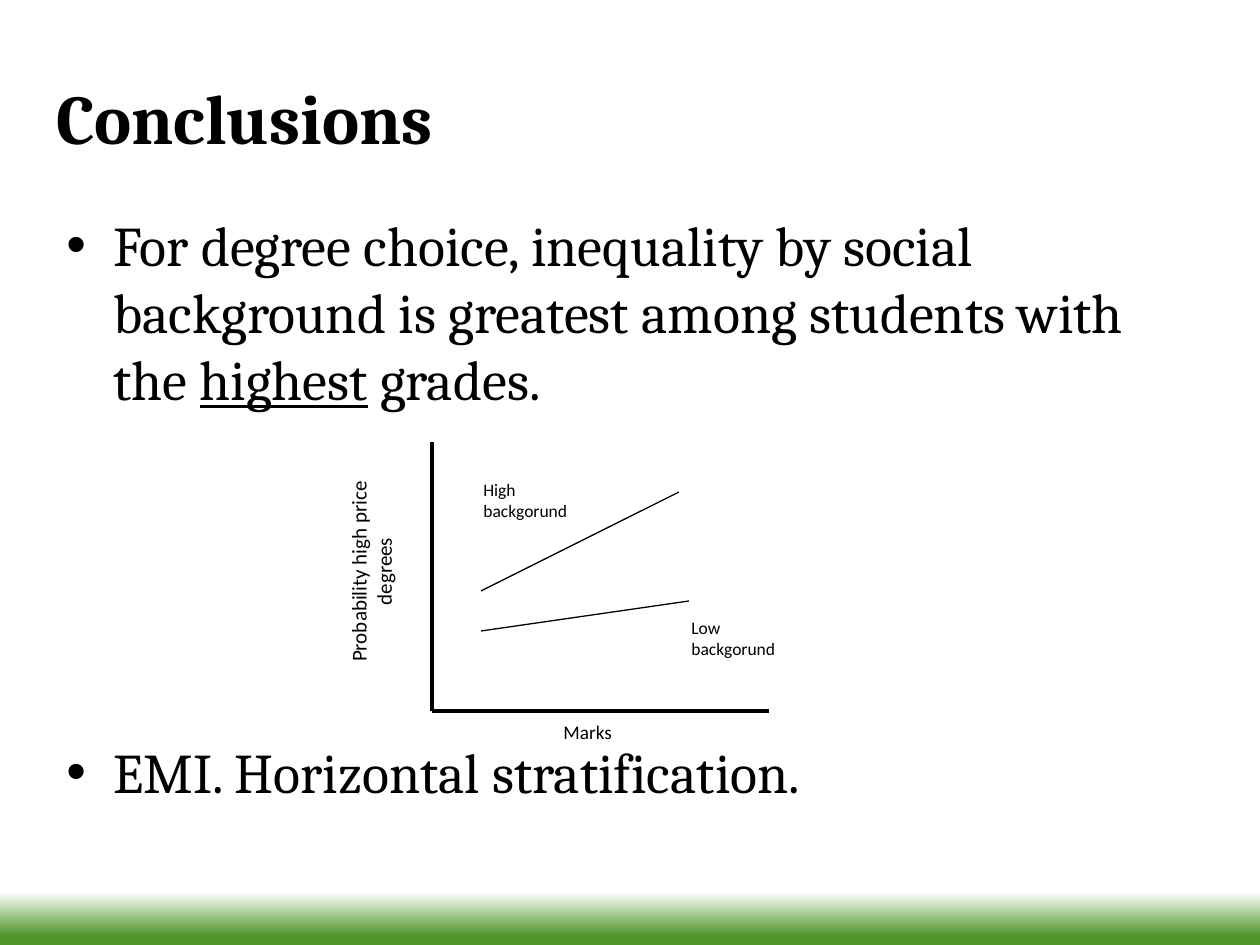
from lxml.etree import SubElement
from pptx import Presentation
from pptx.dml.color import RGBColor
from pptx.enum.shapes import MSO_CONNECTOR, MSO_SHAPE
from pptx.enum.text import MSO_ANCHOR, PP_ALIGN
from pptx.oxml.ns import qn
from pptx.util import Emu, Pt

COLOURS = {"text": "000000", "green": "4F952B", "white": "FFFFFF"}
HEADING = {"name": "Cambria", "size": Pt(40), "bold": True}
BODY = {"name": "Cambria", "size": Pt(32)}
AXIS_TITLE = {"name": "Calibri", "size": Pt(12)}
MARKS_TITLE = {"name": "Calibri", "size": Pt(11)}
LINE_LABEL = {"name": "Calibri", "size": Pt(10)}


def px(length):
    return Emu(round(length * 914400 / 126))


def colour(name):
    return RGBColor.from_string(COLOURS[name])


class SlideBuilder:
    """Draws styled elements on the current slide, with lengths in px."""

    def __init__(self, presentation):
        self.slide = presentation.slides.add_slide(presentation.slide_layouts[6])

    def band(self, box, stops):
        shape = self.slide.shapes.add_shape(MSO_SHAPE.RECTANGLE, *map(px, box))
        shape.shadow.inherit = False
        shape.line.fill.background()
        shape.fill.gradient()
        shape.fill.gradient_angle = 90
        for stop, (position, name) in zip(shape.fill.gradient_stops, stops):
            stop.position = position
            stop.color.rgb = colour(name)

    def line(self, start, end, width):
        connector = self.slide.shapes.add_connector(
            MSO_CONNECTOR.STRAIGHT, *map(px, start + end))
        connector.line.color.rgb = colour("text")
        connector.line.width = Pt(width)
        SubElement(connector._element.spPr, qn("a:effectLst"))

    def text(self, box, paragraphs, style, anchor=MSO_ANCHOR.TOP,
             alignment=PP_ALIGN.LEFT, rotation=0, bullet=False, gap=0):
        shape = self.slide.shapes.add_textbox(*map(px, box))
        shape.rotation = rotation
        frame = shape.text_frame
        frame.word_wrap = True
        frame.vertical_anchor = anchor
        for index, runs in enumerate(paragraphs):
            paragraph = frame.add_paragraph() if index else frame.paragraphs[0]
            paragraph.alignment = alignment
            if index:
                paragraph.space_before = Pt(gap)
            if bullet:
                self.add_bullet(paragraph)
            for content, extra in runs:
                run = paragraph.add_run()
                run.text = content
                run.font.color.rgb = colour("text")
                for attribute, value in {**style, **extra}.items():
                    setattr(run.font, attribute, value)

    def add_bullet(self, paragraph):
        properties = paragraph._p.get_or_add_pPr()
        indent = px(47)
        properties.set("marL", str(indent))
        properties.set("indent", str(-indent))
        SubElement(properties, qn("a:buFont"), typeface="Arial")
        SubElement(properties, qn("a:buChar"), char="•")

    def label(self, box, content, style, **layout):
        self.text(box, [[(content, {})]], style, **layout)


def main():
    presentation = Presentation()
    presentation.slide_width, presentation.slide_height = px(1260), px(945)
    builder = SlideBuilder(presentation)
    builder.band((0, 890, 1260, 55), [(0.17, "green"), (0.96, "white")])
    builder.label((44, 37, 1134, 158), "Conclusions", HEADING,
                  anchor=MSO_ANCHOR.MIDDLE)
    conclusions = [
        [("For degree choice, inequality by social background is greatest "
          "among students with the ", {}),
         ("highest", {"underline": True}),
         (" grades.", {})],
        [("EMI. Horizontal stratification.", {})],
    ]
    builder.text((54, 204, 1153, 645), conclusions, BODY, bullet=True, gap=186)

    origin = (432, 711)
    for start, end, width in [
        ((432, 442), origin, 2),
        (origin, (769, 711), 2),
        ((481, 591), (679, 492), 0.75),
        ((481, 631), (689, 601), 0.75),
    ]:
        builder.line(start, end, width)

    builder.label((551, 714, 100, 37), "Marks", MARKS_TITLE)
    builder.label((242, 540, 258, 63), "Probability high price degrees",
                  AXIS_TITLE, alignment=PP_ALIGN.CENTER, rotation=270)
    for left, top, content in [(471, 473, "High backgorund"),
                               (679, 611, "Low backgorund")]:
        builder.label((left, top, 118, 55), content, LINE_LABEL)
    presentation.save("out.pptx")


if __name__ == "__main__":
    main()
